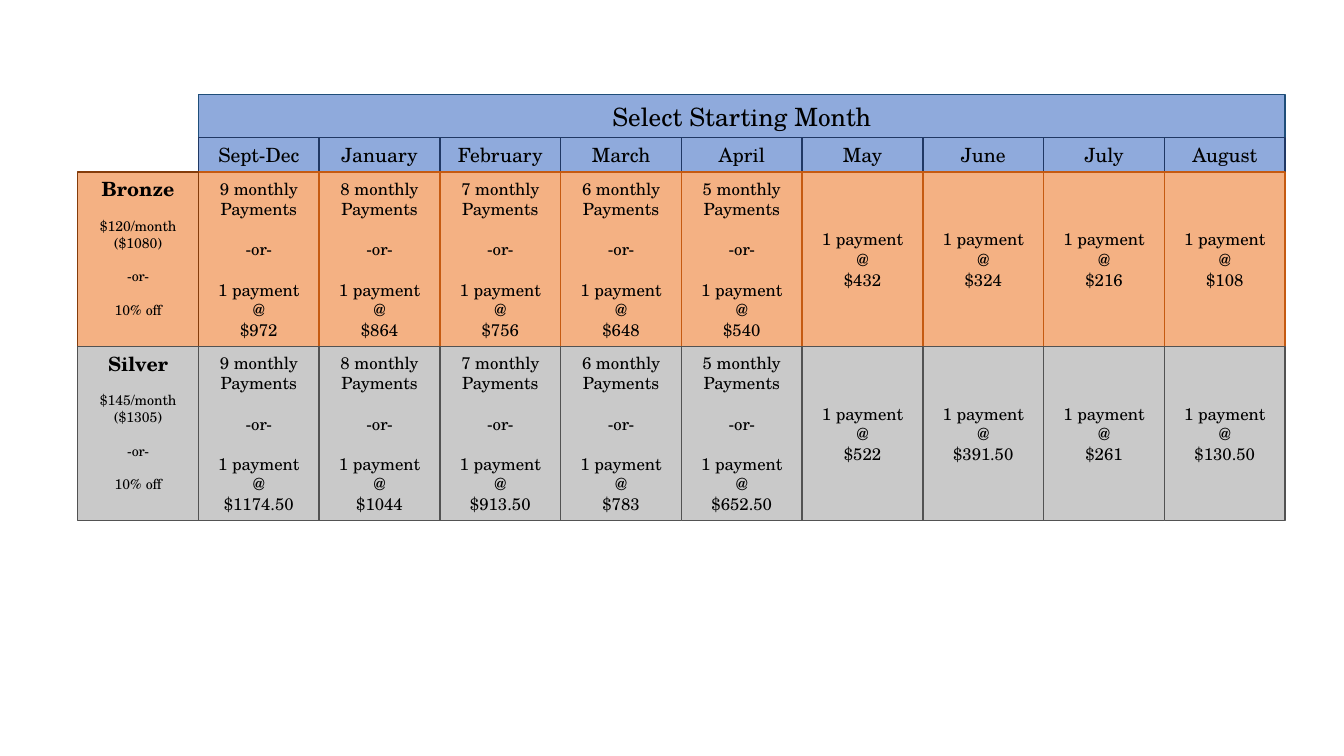
from dataclasses import dataclass

from pptx import Presentation
from pptx.dml.color import RGBColor
from pptx.enum.shapes import MSO_SHAPE as Shape
from pptx.enum.text import MSO_ANCHOR as Anchor, PP_ALIGN as Align
from pptx.slide import Slide
from pptx.util import Emu, Pt

EMU_PER_PX = 9525


@dataclass(frozen=True)
class Theme:
    font: str = "TeX Gyre Schola"
    ink: str = "000000"
    header_fill: str = "8FAADC"
    title_line: str = "1F4E79"
    month_line: str = "203864"
    bronze_fill: str = "F4B183"
    bronze_line: str = "C55A11"
    bronze_label_line: str = "843C0B"
    silver_fill: str = "C9C9C9"
    silver_line: str = "525252"
    title_size: int = 18
    heading_size: int = 14
    payment_size: int = 12
    detail_size: int = 10
    payment_gap: float = 14.4
    detail_gap: float = 12


@dataclass(frozen=True)
class Line:
    text: str
    size: int
    bold: bool = False
    gap: float = 0


@dataclass(frozen=True)
class Cell:
    left: int
    top: int
    width: int
    height: int
    fill: str
    outline: str
    lines: list[Line]
    anchor: Anchor = Anchor.MIDDLE


@dataclass(frozen=True)
class Plan:
    name: str
    monthly: str
    total: str
    fill: str
    outline: str
    label_outline: str
    prices: list[str]


THEME = Theme()

# Grid
LEFT, TOP = 74, 90
COLUMN_WIDTH = 115
TITLE_HEIGHT, MONTH_HEIGHT, PLAN_HEIGHT = 41, 33, 166
MONTH_TOP = TOP + TITLE_HEIGHT
PLAN_TOP = MONTH_TOP + MONTH_HEIGHT

# Content
MONTHS = ["Sept-Dec", "January", "February", "March", "April", "May", "June", "July", "August"]
INSTALMENTS = [9, 8, 7, 6, 5]
PLANS = [
    Plan("Bronze", "$120/month", "($1080)",
         THEME.bronze_fill, THEME.bronze_line, THEME.bronze_label_line,
         ["$972", "$864", "$756", "$648", "$540", "$432", "$324", "$216", "$108"]),
    Plan("Silver", "$145/month", "($1305)",
         THEME.silver_fill, THEME.silver_line, THEME.silver_line,
         ["$1174.50", "$1044", "$913.50", "$783", "$652.50", "$522", "$391.50", "$261", "$130.50"]),
]


def px(length: int) -> Emu:
    return Emu(length * EMU_PER_PX)


def column_left(column: int) -> int:
    return LEFT + column * COLUMN_WIDTH


def draw_cell(page: Slide, cell: Cell) -> None:
    box = page.shapes.add_shape(Shape.FLOWCHART_PROCESS, px(cell.left), px(cell.top),
                                px(cell.width), px(cell.height))
    box.shadow.inherit = False
    box.fill.solid()
    box.fill.fore_color.rgb = RGBColor.from_string(cell.fill)
    box.line.color.rgb = RGBColor.from_string(cell.outline)
    box.line.width = Pt(1)
    frame = box.text_frame
    frame.word_wrap = True
    frame.vertical_anchor = cell.anchor
    for index, line in enumerate(cell.lines):
        para = frame.add_paragraph() if index else frame.paragraphs[0]
        para.alignment = Align.CENTER
        if line.gap:
            para.space_before = Pt(line.gap)
        span = para.add_run()
        span.text = line.text
        formats = {"name": THEME.font, "size": Pt(line.size), "bold": line.bold}
        for name, value in formats.items():
            setattr(span.font, name, value)
        span.font.color.rgb = RGBColor.from_string(THEME.ink)


def payment_lines(column: int, price: str) -> list[Line]:
    size, gap = THEME.payment_size, THEME.payment_gap
    choice = []
    if column < len(INSTALMENTS):
        choice = [Line(f"{INSTALMENTS[column]} monthly", size), Line("Payments", size),
                  Line("-or-", size, gap=gap)]
    single = Line("1 payment", size, gap=gap if choice else 0)
    return [*choice, single, Line("@", size), Line(price, size)]


def label_lines(plan: Plan) -> list[Line]:
    size, gap = THEME.detail_size, THEME.detail_gap
    return [Line(plan.name, THEME.heading_size, bold=True),
            Line(plan.monthly, size, gap=gap), Line(plan.total, size),
            Line("-or-", size, gap=gap), Line("10% off", size, gap=gap)]


def draw_header(page: Slide) -> None:
    draw_cell(page, Cell(column_left(1), TOP, COLUMN_WIDTH * len(MONTHS), TITLE_HEIGHT,
                         THEME.header_fill, THEME.title_line,
                         [Line("Select Starting Month", THEME.title_size)]))
    for column, month in enumerate(MONTHS, start=1):
        draw_cell(page, Cell(column_left(column), MONTH_TOP, COLUMN_WIDTH, MONTH_HEIGHT,
                             THEME.header_fill, THEME.month_line,
                             [Line(month, THEME.heading_size)]))


def draw_plan(page: Slide, plan: Plan, top: int) -> None:
    for column, price in enumerate(plan.prices):
        draw_cell(page, Cell(column_left(column + 1), top, COLUMN_WIDTH, PLAN_HEIGHT,
                             plan.fill, plan.outline, payment_lines(column, price)))
    draw_cell(page, Cell(LEFT, top, COLUMN_WIDTH, PLAN_HEIGHT, plan.fill,
                         plan.label_outline, label_lines(plan), Anchor.TOP))


def main() -> None:
    deck = Presentation()
    deck.slide_width, deck.slide_height = px(1280), px(720)
    page = deck.slides.add_slide(deck.slide_layouts[6])
    draw_header(page)
    for row, plan in enumerate(PLANS):
        draw_plan(page, plan, PLAN_TOP + row * PLAN_HEIGHT)
    deck.save("out.pptx")


if __name__ == "__main__":
    main()
